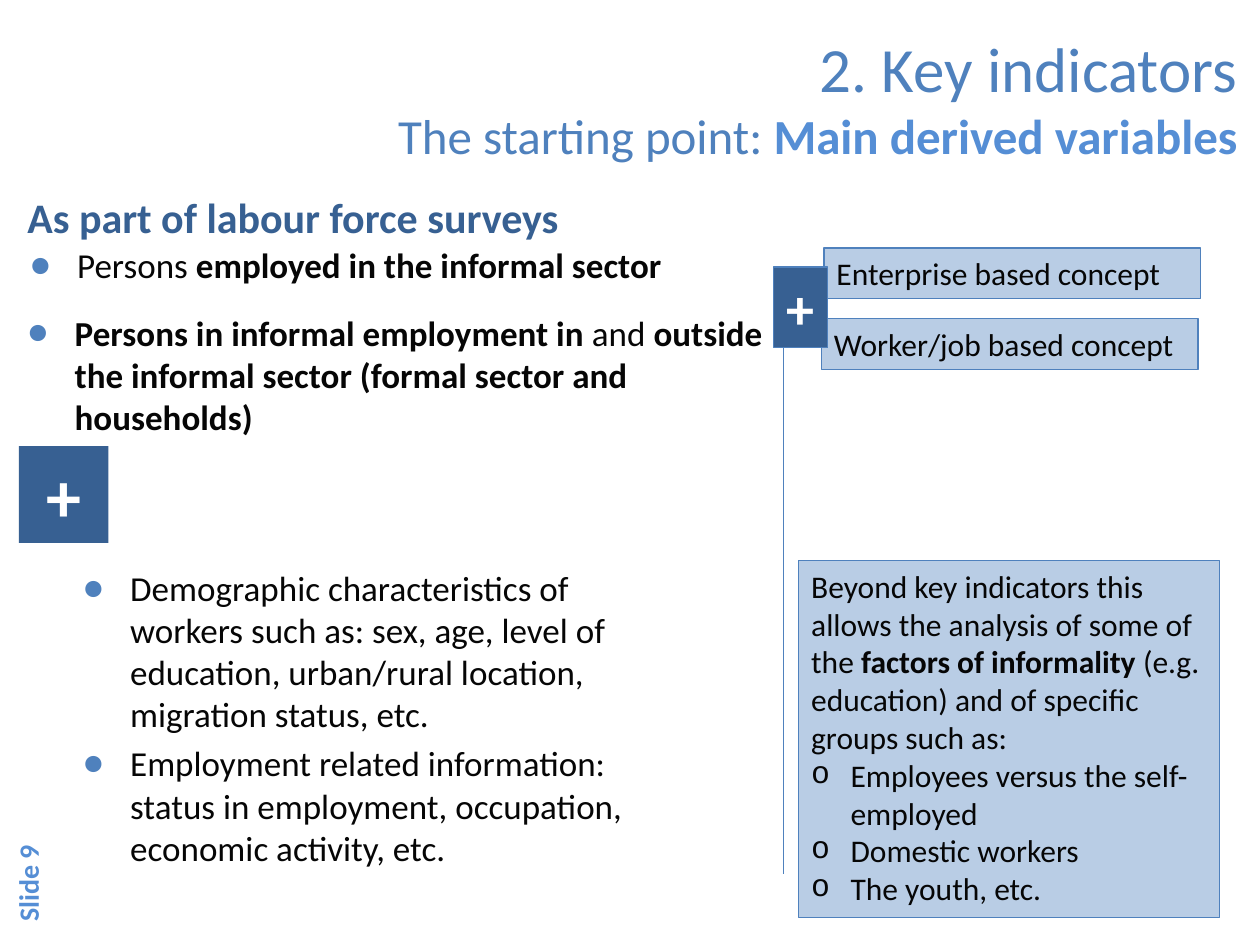
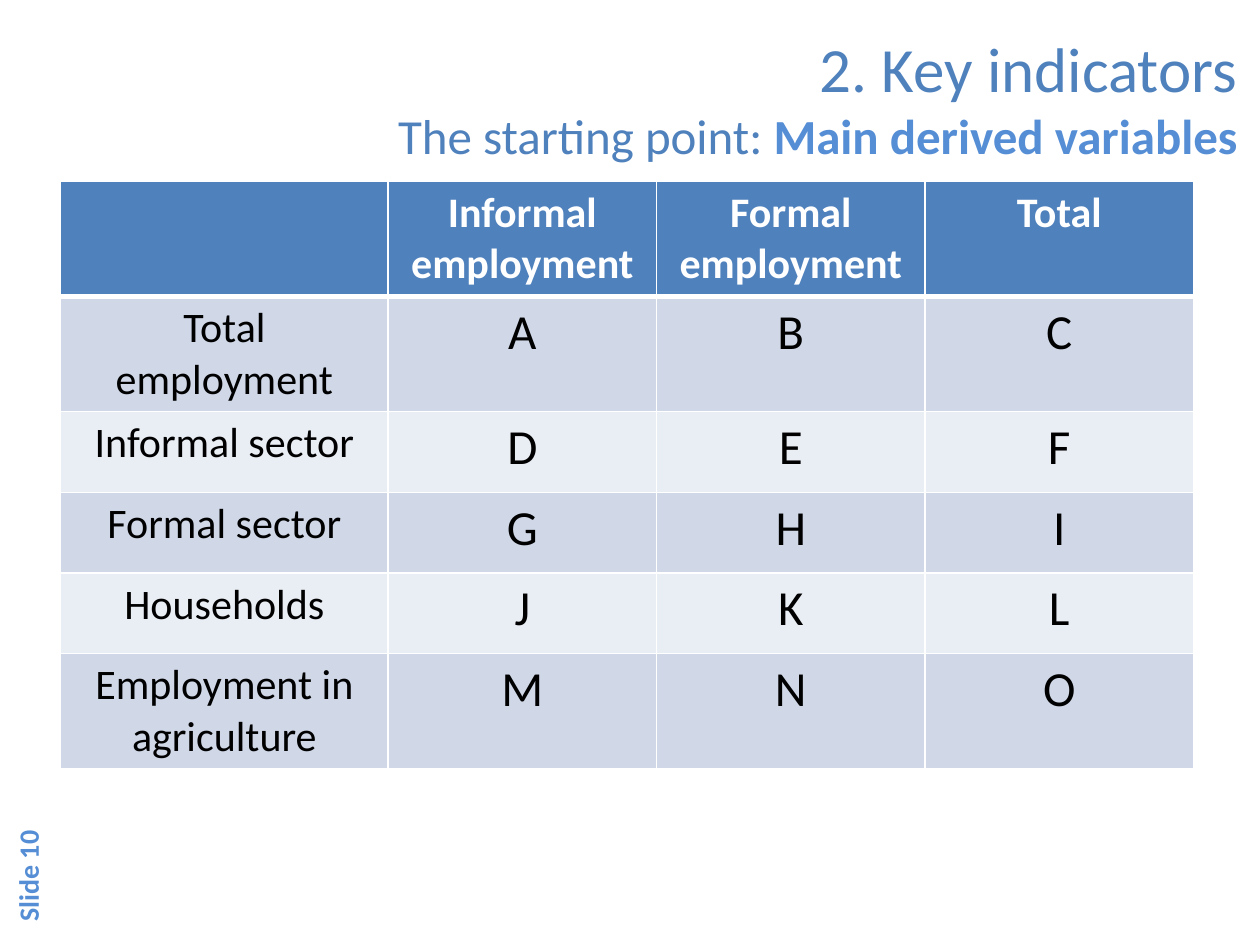
from lxml import etree
from pptx import Presentation
from pptx.dml.color import RGBColor
from pptx.enum.shapes import MSO_CONNECTOR, MSO_SHAPE
from pptx.enum.text import MSO_ANCHOR, MSO_AUTO_SIZE, PP_ALIGN
from pptx.oxml.ns import qn
from pptx.util import Pt

RECTANGLE = MSO_SHAPE.RECTANGLE
STRAIGHT = MSO_CONNECTOR.STRAIGHT
TOP, MIDDLE = MSO_ANCHOR.TOP, MSO_ANCHOR.MIDDLE
NO_FIT = MSO_AUTO_SIZE.NONE
LEFT, CENTER, RIGHT = PP_ALIGN.LEFT, PP_ALIGN.CENTER, PP_ALIGN.RIGHT

FONT = "Calibri"
BLUE, BRIGHT_BLUE, DARK_BLUE = "4F81BD", "558ED5", "376092"
PALE_BLUE, BAND_DARK, BAND_LIGHT = "B9CDE5", "D0D8E8", "E9EDF4"
INK, BLACK, WHITE = "060606", "000000", "FFFFFF"

# Bullet styles: character, indent, colour, font, space before
DOT = ("●", 27, BLUE, FONT, 4)
RING = ("o", 22.5, INK, "Courier New", 0)


def color(value):
    return RGBColor.from_string(value)


def add_run(paragraph, text, size=20, color_hex=INK, bold=False):
    run = paragraph.add_run()
    run.text = text
    run.font.name = FONT
    run.font.size = Pt(size)
    run.font.bold = bold
    run.font.color.rgb = color(color_hex)


def add_line_break(paragraph, size):
    paragraph.add_line_break()
    line_break = paragraph._p.findall(qn("a:br"))[-1]
    etree.SubElement(line_break, qn("a:rPr"), sz=str(size * 100))


def set_bullet(paragraph, bullet, first):
    character, indent, bullet_color, font, space = bullet
    properties = paragraph._p.get_or_add_pPr()
    properties.set("marL", str(Pt(indent)))
    properties.set("indent", str(-Pt(indent)))
    if not first:
        paragraph.space_before = Pt(space)
    holder = etree.SubElement(properties, qn("a:buClr"))
    etree.SubElement(holder, qn("a:srgbClr"), val=bullet_color)
    etree.SubElement(properties, qn("a:buFont"), typeface=font)
    etree.SubElement(properties, qn("a:buChar"), char=character)


def set_borders(cell, bottom_width):
    properties = cell._tc.get_or_add_tcPr()
    widths = {"a:lnL": 1, "a:lnR": 1, "a:lnT": 1, "a:lnB": bottom_width}
    for index, (tag, width) in enumerate(widths.items()):
        line = etree.Element(qn(tag), w=str(Pt(width)))
        fill = etree.SubElement(line, qn("a:solidFill"))
        etree.SubElement(fill, qn("a:srgbClr"), val=WHITE)
        properties.insert(index, line)


class Deck:
    """Holds the shared style and the current slide."""

    def __init__(self):
        self.presentation = Presentation()
        self.presentation.slide_width = Pt(720)
        self.presentation.slide_height = Pt(540)
        self.slide = None

    def start_slide(self, number, heading, lead, topic):
        layout = self.presentation.slide_layouts[5]
        self.slide = self.presentation.slides.add_slide(layout)
        title = self.slide.shapes.title
        title.left, title.top, title.width, title.height = map(Pt, (0.7, 7.2, 713.5, 96.5))
        frame = title.text_frame
        frame.auto_size = NO_FIT
        frame.vertical_anchor = MIDDLE
        paragraph = frame.paragraphs[0]
        paragraph.alignment = RIGHT
        add_run(paragraph, heading, size=36, color_hex=BLUE)
        add_line_break(paragraph, 36)
        add_run(paragraph, lead, size=28, color_hex=BLUE)
        add_run(paragraph, topic, size=28, color_hex=BRIGHT_BLUE, bold=True)
        label = self.text((-30.2, 473, 92.2, 28.8), [f"Slide {number}"], size=16,
                          color_hex=BRIGHT_BLUE, bold=True, anchor=MIDDLE)
        label.rotation = 270

    def fill_text(self, shape, paragraphs, bullets=None, alignment=LEFT,
                  anchor=TOP, wrap=True, bold=False, **style):
        """A paragraph is a string, or a list of (text, bold) pairs."""
        frame = shape.text_frame
        frame.word_wrap = wrap
        frame.auto_size = NO_FIT
        frame.vertical_anchor = anchor
        bullets = bullets or [None] * len(paragraphs)
        for index, (content, bullet) in enumerate(zip(paragraphs, bullets)):
            paragraph = frame.add_paragraph() if index else frame.paragraphs[0]
            paragraph.alignment = alignment
            if bullet:
                set_bullet(paragraph, bullet, first=index == 0)
            pieces = [(content, bold)] if isinstance(content, str) else content
            for text, piece_bold in pieces:
                add_run(paragraph, text, bold=piece_bold, **style)

    def text(self, box, paragraphs, **style):
        shape = self.slide.shapes.add_textbox(*map(Pt, box))
        self.fill_text(shape, paragraphs, **style)
        return shape

    def panel(self, box, paragraphs, fill=PALE_BLUE, outline=BLUE, **style):
        shape = self.slide.shapes.add_shape(RECTANGLE, *map(Pt, box))
        shape.shadow.inherit = False
        shape.fill.solid()
        shape.fill.fore_color.rgb = color(fill)
        if outline:
            shape.line.color.rgb = color(outline)
            shape.line.width = Pt(0.75)
        else:
            shape.line.fill.background()
        self.fill_text(shape, paragraphs, **style)

    def plus(self, box, size, **style):
        self.panel(box, ["+"], fill=DARK_BLUE, size=size, color_hex=WHITE, bold=True, **style)

    def line(self, *ends):
        connector = self.slide.shapes.add_connector(STRAIGHT, *map(Pt, ends))
        connector.line.color.rgb = color(BLUE)
        connector.line.width = Pt(0.75)
        etree.SubElement(connector._element.spPr, qn("a:effectLst"))

    def table(self, left, top, widths, heights, rows):
        frame = self.slide.shapes.add_table(len(rows), len(widths), Pt(left), Pt(top),
                                            Pt(sum(widths)), Pt(sum(heights)))
        table = frame.table
        table.horz_banding = False
        for column, width in zip(table.columns, widths):
            column.width = Pt(width)
        for row_index, (values, height) in enumerate(zip(rows, heights)):
            table.rows[row_index].height = Pt(height)
            header = row_index == 0
            band = BAND_DARK if row_index % 2 else BAND_LIGHT
            for column_index, value in enumerate(values):
                cell = table.cell(row_index, column_index)
                cell.fill.solid()
                cell.fill.fore_color.rgb = color(BLUE if header else band)
                set_borders(cell, 3 if header else 1)
                if value:
                    paragraph = cell.text_frame.paragraphs[0]
                    paragraph.alignment = CENTER
                    add_run(paragraph, value, bold=header,
                            size=24 if header or column_index == 0 else 28,
                            color_hex=WHITE if header else BLACK)


def build_variables_slide(deck):
    # Left column: employment variables
    deck.text((10, 135.4, 437.8, 28),
              [[("Persons ", False), ("employed in the informal sector", True)]], bullets=[DOT])
    deck.text((8.6, 174.2, 437.8, 64.8),
              [[("Persons in informal employment in ", True), ("and", False),
                (" outside the informal sector (formal sector and households)", True)]],
              bullets=[DOT])
    deck.text((8.6, 105.8, 436.3, 36), ["As part of labour force surveys"],
              size=24, color_hex=DARK_BLUE, bold=True)

    # Right column: the two concepts
    deck.line(447.8, 154.1, 447.8, 499.7)
    deck.panel((470.9, 141.8, 215.3, 28.8), ["Enterprise based concept"], size=18)
    deck.panel((469.4, 182.2, 215.3, 28.8), ["Worker/job based concept"], size=18)
    deck.plus((442.1, 152.6, 31, 46.1), size=32, wrap=False)

    # Additional characteristics
    deck.text((40.3, 320.4, 360, 181.4), [
        "Demographic characteristics of workers such as: sex, age, level of education, "
        "urban/rural location, migration status, etc.",
        "Employment related information: status in employment, occupation, "
        "economic activity, etc.",
    ], bullets=[DOT, DOT])
    deck.plus((10.8, 254.9, 51.1, 55.4), size=40, outline=None, alignment=CENTER)

    # Use of the indicators
    deck.panel((456.5, 320.4, 240.5, 203.8), [
        [("Beyond key indicators this allows the analysis of some of the ", False),
         ("factors of informality ", True),
         ("(e.g. education) and of specific groups such as:", False)],
        "Employees versus the self-employed",
        "Domestic workers",
        "The youth, etc.",
    ], bullets=[None, RING, RING, RING], size=18)


def build_table_slide(deck):
    tall, short = 56.9, 46.1
    deck.table(34.6, 103.7, [187.2] + [153.4] * 3, [tall, tall, short, short, short, tall], [
        ["", "Informal employment", "Formal employment", "Total"],
        ["Total employment", "A", "B", "C"],
        ["Informal sector", "D", "E", "F"],
        ["Formal sector", "G", "H", "I"],
        ["Households", "J", "K", "L"],
        ["Employment in agriculture", "M", "N", "O"],
    ])


def main():
    deck = Deck()
    for number, build in enumerate((build_variables_slide, build_table_slide), start=9):
        deck.start_slide(number, "2. Key indicators", "The starting point: ",
                         "Main derived variables")
        build(deck)
    deck.presentation.save("out.pptx")


if __name__ == "__main__":
    main()
